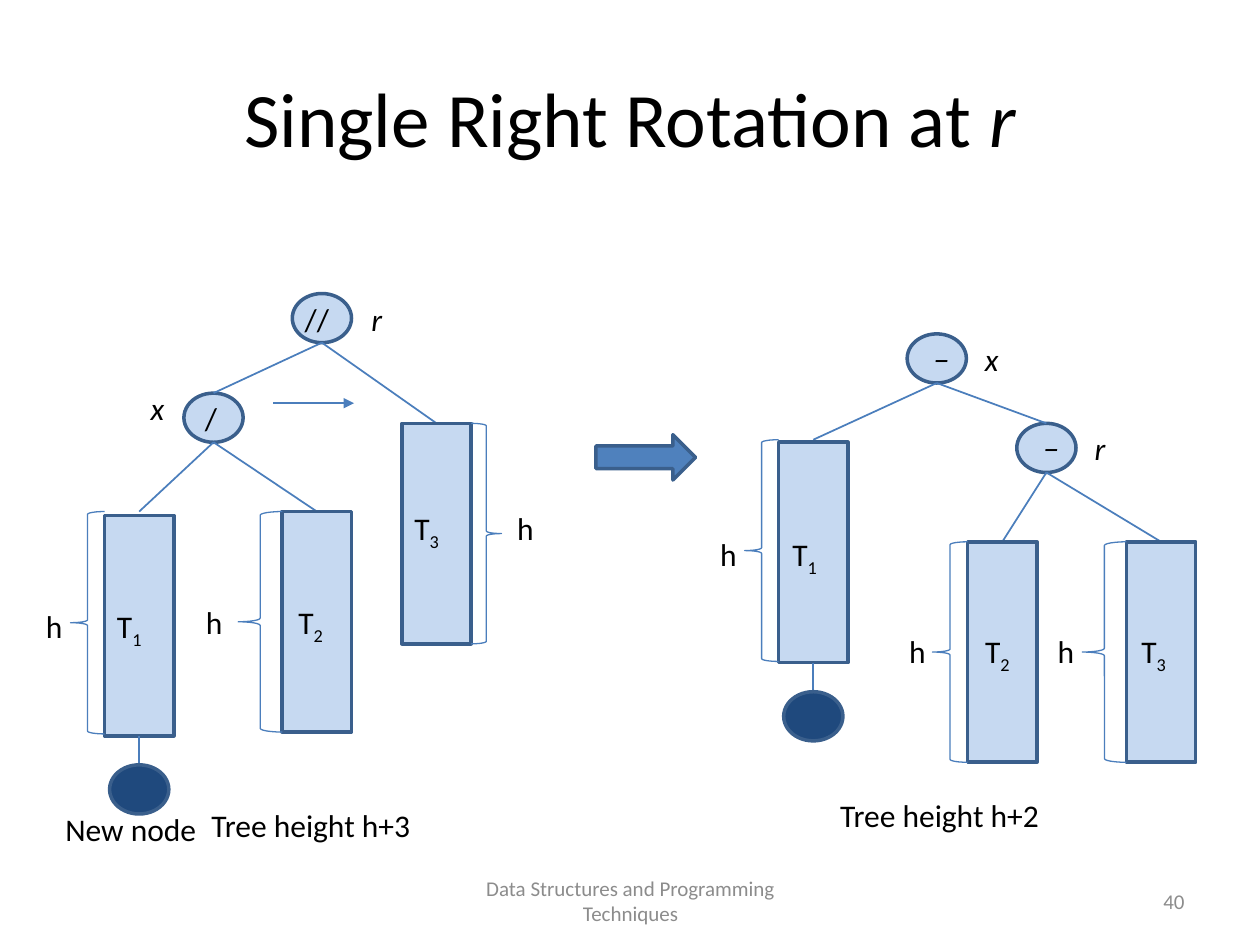
from lxml import etree
from pptx import Presentation
from pptx.dml.color import RGBColor
from pptx.enum import shapes, text
from pptx.oxml import ns
from pptx.util import Inches, Pt

COLORS = {"black": "000000", "gray": "8C8C8C", "pale": "C6D9F1", "blue": "4F81BD",
          "navy": "1F497D", "outline": "3A5F8C", "edge": "4B7EBC"}
KIND = shapes.MSO_SHAPE
ALIGN = text.PP_ALIGN
NODE_WIDTH, NODE_HEIGHT = 0.47, 0.39
BAR_WIDTH, BAR_HEIGHT = 0.55, 1.75


def color(name):
    """Return the named colour as an RGB value."""
    return RGBColor.from_string(COLORS[name])


def add_text(page, box, words, size=18, tint="black", align=ALIGN.LEFT, italic=False,
             tail="", tail_italic=False, subscript=False, middle=False):
    """Write words, with an optional differently styled tail, in a box."""
    frame = page.shapes.add_textbox(*map(Inches, box)).text_frame
    frame.word_wrap = True
    frame.vertical_anchor = text.MSO_ANCHOR.MIDDLE if middle else text.MSO_ANCHOR.TOP
    frame.auto_size = text.MSO_AUTO_SIZE.NONE if middle else text.MSO_AUTO_SIZE.SHAPE_TO_FIT_TEXT
    para = frame.paragraphs[0]
    para.alignment = align
    for part, slanted in ((words, italic), (tail, tail_italic)):
        if part:
            span = para.add_run()
            span.text = part
            span.font.name, span.font.size = "Calibri", Pt(size)
            span.font.italic = slanted
            span.font.color.rgb = color(tint)
    if subscript:
        span.font._element.set("baseline", "-25000")


def add_shape(page, kind, box, fill=None, line="outline", weight=2):
    """Draw a preset shape with a flat fill and outline."""
    shape = page.shapes.add_shape(kind, *map(Inches, box))
    shape.shadow.inherit = False
    if fill:
        shape.fill.solid()
        shape.fill.fore_color.rgb = color(fill)
    else:
        shape.fill.background()
    shape.line.color.rgb = color(line)
    shape.line.width = Pt(weight)


def add_edge(page, start, end, arrow=False):
    """Join two points with a thin line, with an arrowhead at the end on request."""
    edge = page.shapes.add_connector(shapes.MSO_CONNECTOR.STRAIGHT, *map(Inches, (*start, *end)))
    edge.line.color.rgb = color("edge")
    edge.line.width = Pt(1)
    if arrow:
        etree.SubElement(edge.line._get_or_add_ln(), ns.qn("a:tailEnd"), type="triangle")
    etree.SubElement(edge._element.spPr, ns.qn("a:effectLst"))


def add_node(page, left, top, sign, name, name_box, sign_shift=0, sign_width=0.43,
             align=ALIGN.CENTER, italic=False):
    """Draw a tree node with its balance sign and name; return its top and bottom points."""
    add_shape(page, KIND.OVAL, (left, top, NODE_WIDTH, NODE_HEIGHT), "pale")
    add_text(page, (left + sign_shift, top, sign_width, 0.4), sign, align=align, italic=italic)
    shift_x, shift_y = name_box
    add_text(page, (left + shift_x, top + shift_y, 0.38, 0.4), name, align=ALIGN.CENTER, italic=True)
    middle = left + NODE_WIDTH / 2
    return (middle, top), (middle, top + NODE_HEIGHT)


def add_subtree(page, left, top, digit, parent, brace, height_at, label, rise=0, right=False):
    """Draw a subtree bar with its label, height brace and edge from its parent."""
    shift, drop = label
    add_edge(page, parent, (left + BAR_WIDTH / 2, top - rise))
    add_shape(page, KIND.RECTANGLE, (left, top, BAR_WIDTH, BAR_HEIGHT), "pale")
    kind = KIND.RIGHT_BRACE if right else KIND.LEFT_BRACE
    brace_left = left + BAR_WIDTH if right else left - brace
    add_shape(page, kind, (brace_left, top - rise, brace, BAR_HEIGHT + rise / 2),
              line="edge", weight=0.75)
    add_text(page, (left + shift, top + drop, 0.47, 0.4), "T", tail=digit, subscript=True)
    add_text(page, (left + height_at - 0.19, top + drop, 0.38, 0.4), "h", align=ALIGN.CENTER)


def add_new_node(page, left, top):
    """Hang the inserted node below the subtree bar at the given corner."""
    middle, bottom = left + BAR_WIDTH / 2, top + BAR_HEIGHT
    add_edge(page, (middle, bottom), (middle, bottom + 0.23))
    add_shape(page, KIND.OVAL, (left + 0.04, bottom + 0.23, NODE_WIDTH, NODE_HEIGHT), "navy")


def tree_before(page, left, top):
    """Draw the unbalanced tree from its top left corner."""
    _, root = add_node(page, left + 1.82, top, "//", "r", (0.48, 0), align=ALIGN.LEFT)
    child_top, child = add_node(page, left + 0.96, top + 0.79, "/", "x", (-0.4, -0.08))
    add_edge(page, root, child_top)
    add_edge(page, (left + 1.67, top + 0.87), (left + 2.31, top + 0.87), arrow=True)
    add_subtree(page, left + 0.33, top + 1.76, "1", child, 0.27, -0.4, (0, 0.68), rise=0.03)
    add_subtree(page, left + 1.74, top + 1.73, "2", child, 0.35, -0.54, (0.03, 0.68))
    add_subtree(page, left + 2.69, top + 1.03, "3", root, 0.24, 0.98, (0, 0.63), right=True)
    add_new_node(page, left + 0.33, top + 1.76)
    add_text(page, (left - 0.08, top + 4.05, 1.29, 0.4), "New node")
    add_text(page, (left + 1.08, top + 4.02, 2.58, 0.4), "Tree height h+3")


def tree_after(page, left, top):
    """Draw the rotated tree from its top left corner."""
    sign = dict(sign_shift=0.08, sign_width=0.38, italic=True)
    _, root = add_node(page, left + 1.7, top, "−", "x", (0.48, 0), **sign)
    child_top, child = add_node(page, left + 2.57, top + 0.71, "−", "r", (0.47, 0), **sign)
    add_edge(page, root, child_top)
    add_subtree(page, left + 0.68, top + 0.86, "1", root, 0.27, -0.4, (0.01, 0.69), rise=0.02)
    add_subtree(page, left + 2.18, top + 1.65, "2", child, 0.28, -0.4, (0.04, 0.67))
    add_subtree(page, left + 3.44, top + 1.65, "3", child, 0.35, -0.48, (0.02, 0.67))
    add_new_node(page, left + 0.68, top + 0.86)
    add_text(page, (left + 1.07, top + 3.62, 2.58, 0.4), "Tree height h+2")


def page_frame(page, left, width):
    """Write the title, footer and page number between the margins."""
    add_text(page, (left, 0.3, width, 1.25), "Single Right Rotation at ", size=44,
             align=ALIGN.CENTER, tail="r", tail_italic=True, middle=True)
    small = dict(size=12, tint="gray", middle=True)
    add_text(page, (left + 2.92, 6.95, 3.17, 0.4), "Data Structures and Programming Techniques",
             align=ALIGN.CENTER, **small)
    add_text(page, (left + width - 2.33, 6.95, 2.33, 0.4), "40", align=ALIGN.RIGHT, **small)


def main():
    """Build and save the slide."""
    deck = Presentation()
    deck.slide_width, deck.slide_height = Inches(10), Inches(7.5)
    page = deck.slides.add_slide(deck.slide_layouts[6])
    page_frame(page, 0.5, 9)
    tree_before(page, 0.5, 2.33)
    add_shape(page, KIND.RIGHT_ARROW, (4.73, 3.45, 0.79, 0.36), "blue")
    tree_after(page, 5.5, 2.65)
    deck.save("out.pptx")


if __name__ == "__main__":
    main()
